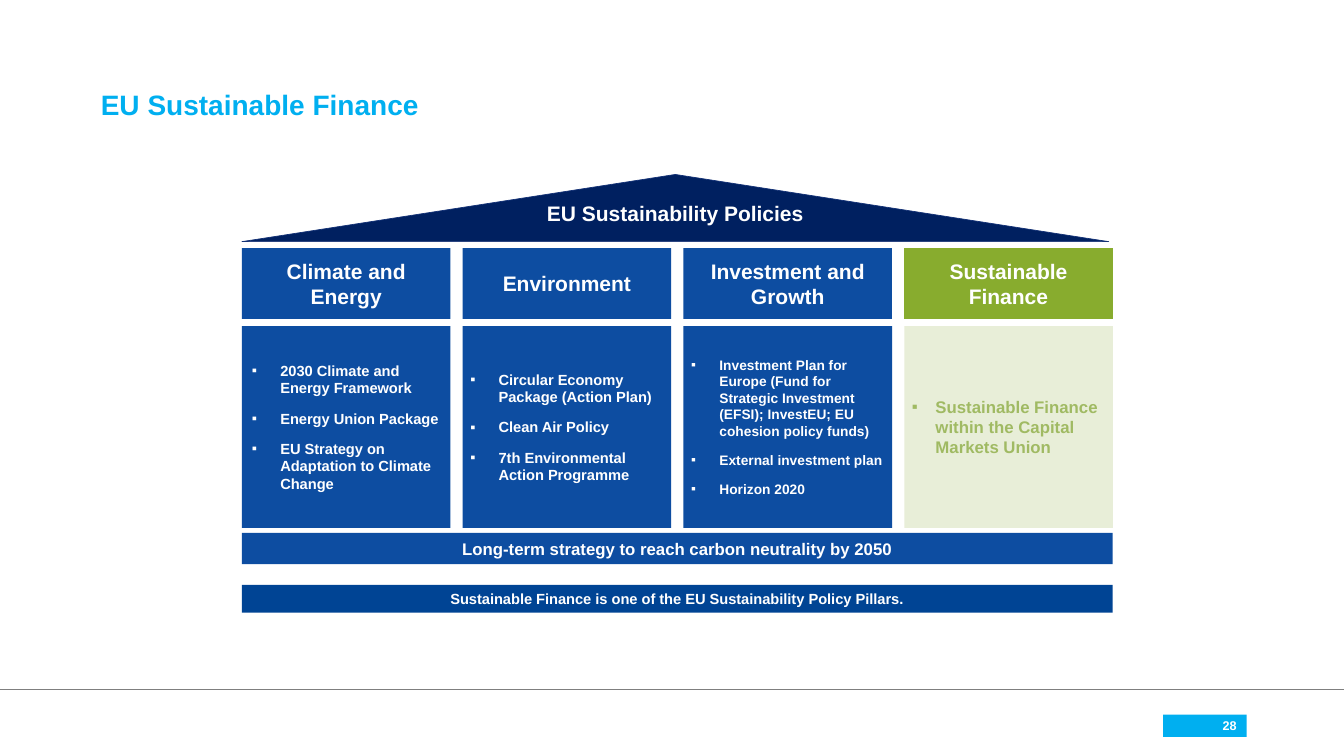
from typing import NamedTuple

from lxml.etree import SubElement
from pptx import Presentation
from pptx.dml.color import RGBColor
from pptx.enum.shapes import MSO_CONNECTOR, MSO_SHAPE
from pptx.enum.text import MSO_ANCHOR as Anchor
from pptx.enum.text import MSO_AUTO_SIZE as AutoSize
from pptx.enum.text import PP_ALIGN as Align
from pptx.oxml.ns import qn
from pptx.shapes.autoshape import Shape
from pptx.slide import Slide
from pptx.text.text import TextFrame
from pptx.util import Pt

COLOURS = {
    "cyan": "00AFF0",
    "blue": "0D4DA1",
    "deep blue": "004494",
    "navy": "002060",
    "navy edge": "133176",
    "green": "88AC2E",
    "pale green": "E8EED8",
    "soft green": "A0BA63",
    "grey": "7F7F7F",
    "white": "FFFFFF",
}
FONT = "Arial"

# House grid, in points
HOUSE_LEFT, HOUSE_WIDTH = 172.8, 622
PILLAR_WIDTH, PILLAR_STEP = 149, 157.7
HEADING_TOP, HEADING_HEIGHT = 177.2, 50.6
LIST_TOP, LIST_HEIGHT = 233, 144


class Box(NamedTuple):
    left: float
    top: float
    width: float
    height: float


class Insets(NamedTuple):
    left: float
    top: float
    right: float
    bottom: float


WIDE = Insets(7.2, 3.6, 7.2, 3.6)
NARROW = Insets(5.4, 2.7, 5.4, 2.7)
ROOF = Insets(7.2, 0, 7.2, 16.5)


class Panel(NamedTuple):
    text: str
    box: Box
    fill: str
    size: float
    align: Align = Align.CENTER
    insets: Insets = NARROW
    outline: MSO_SHAPE = MSO_SHAPE.RECTANGLE
    edge: str = ""


class Pillar(NamedTuple):
    heading: str
    policies: list[str]
    size: float = 10.5
    indent: float = 20.25
    insets: Insets = NARROW
    heading_fill: str = "blue"
    list_fill: str = "blue"
    list_colour: str = "white"


PILLARS = [
    Pillar("Climate and Energy",
           ["2030 Climate and Energy Framework",
            "Energy Union Package",
            "EU Strategy on Adaptation to Climate Change"],
           insets=WIDE),
    Pillar("Environment",
           ["Circular Economy Package (Action Plan)",
            "Clean Air Policy",
            "7th Environmental Action Programme"]),
    Pillar("Investment and Growth",
           ["Investment Plan for Europe (Fund for Strategic Investment (EFSI); "
            "InvestEU; EU cohesion policy funds)",
            "External investment plan",
            "Horizon 2020"],
           size=9.8),
    Pillar("Sustainable Finance",
           ["Sustainable Finance within the Capital Markets Union"],
           size=12, indent=16.9, heading_fill="green",
           list_fill="pale green", list_colour="soft green"),
]

PANELS = [
    Panel("EU Sustainability Policies", Box(HOUSE_LEFT, 124.6, 619.2, 48), "navy", 15,
          insets=ROOF, outline=MSO_SHAPE.ISOSCELES_TRIANGLE, edge="navy edge"),
    Panel("Long-term strategy to reach carbon neutrality by 2050",
          Box(HOUSE_LEFT, 380.6, HOUSE_WIDTH, 22.4), "blue", 12),
    Panel("Sustainable Finance is one of the EU Sustainability Policy Pillars.",
          Box(HOUSE_LEFT, 417.7, HOUSE_WIDTH, 20), "deep blue", 10.5),
    Panel("28", Box(830.8, 510.4, 59.6, 16), "cyan", 9, Align.RIGHT, WIDE),
]


def colour(name: str) -> RGBColor:
    return RGBColor.from_string(COLOURS[name])


def place(shape: Shape, box: Box) -> None:
    shape.left, shape.top, shape.width, shape.height = map(Pt, box)


def set_frame(frame: TextFrame, insets: Insets, anchor: Anchor = Anchor.MIDDLE) -> None:
    frame.word_wrap = True
    frame.auto_size = AutoSize.NONE
    frame.vertical_anchor = anchor
    frame.margin_left, frame.margin_top, frame.margin_right, frame.margin_bottom = map(Pt, insets)


def write(frame: TextFrame, lines: list[str], size: float, ink: str, align: Align,
          indent: float = 0, gap: float = 0) -> None:
    frame.text = "\n".join(lines)
    for paragraph in frame.paragraphs:
        if indent:
            properties = paragraph._p.get_or_add_pPr()
            properties.set("marL", str(Pt(indent)))
            properties.set("indent", str(-Pt(indent)))
            SubElement(properties, qn("a:buFont"), typeface=FONT)
            SubElement(properties, qn("a:buChar"), char="▪")
        paragraph.alignment = align
        paragraph.space_before = Pt(0)
        paragraph.space_after = Pt(gap)
        font = paragraph.font
        font.name, font.size, font.bold = FONT, Pt(size), True
        font.color.rgb = colour(ink)


def add_panel(slide: Slide, panel: Panel) -> None:
    shape = slide.shapes.add_shape(panel.outline, *map(Pt, panel.box))
    shape.shadow.inherit = False
    shape.fill.solid()
    shape.fill.fore_color.rgb = colour(panel.fill)
    if panel.edge:
        shape.line.color.rgb = colour(panel.edge)
        shape.line.width = Pt(0.5)
    else:
        shape.line.fill.background()
    set_frame(shape.text_frame, panel.insets)
    write(shape.text_frame, [panel.text], panel.size, "white", panel.align)


def add_pillar(slide: Slide, position: int, pillar: Pillar) -> None:
    left = HOUSE_LEFT + position * PILLAR_STEP
    add_panel(slide, Panel(pillar.heading, Box(left, HEADING_TOP, PILLAR_WIDTH, HEADING_HEIGHT),
                           pillar.heading_fill, 15))
    policies = slide.placeholders[position + 1]
    place(policies, Box(left, LIST_TOP, PILLAR_WIDTH, LIST_HEIGHT))
    policies.fill.solid()
    policies.fill.fore_color.rgb = colour(pillar.list_fill)
    set_frame(policies.text_frame, pillar.insets)
    write(policies.text_frame, pillar.policies, pillar.size, pillar.list_colour,
          Align.LEFT, pillar.indent, gap=9)


def add_title(slide: Slide) -> None:
    title = slide.shapes.title
    place(title, Box(64.8, 51.1, 825.1, 39.6))
    set_frame(title.text_frame, WIDE, Anchor.BOTTOM)
    write(title.text_frame, ["EU Sustainable Finance"], 20, "cyan", Align.LEFT)
    title.text_frame.paragraphs[0].line_spacing = 0.9


def add_footer_rule(slide: Slide) -> None:
    rule = slide.shapes.add_connector(MSO_CONNECTOR.STRAIGHT, Pt(0), Pt(492.4), Pt(960), Pt(492.4))
    rule.line.color.rgb = colour("grey")
    rule.line.width = Pt(0.5)
    SubElement(rule._element.spPr, qn("a:effectLst"))


def main() -> None:
    deck = Presentation()
    deck.slide_width, deck.slide_height = Pt(960), Pt(540)
    # The Comparison layout has a title and four bodies, one per pillar
    slide = deck.slides.add_slide(deck.slide_layouts.get_by_name("Comparison"))
    add_title(slide)
    add_footer_rule(slide)
    for position, pillar in enumerate(PILLARS):
        add_pillar(slide, position, pillar)
    for panel in PANELS:
        add_panel(slide, panel)
    deck.save("out.pptx")


if __name__ == "__main__":
    main()
